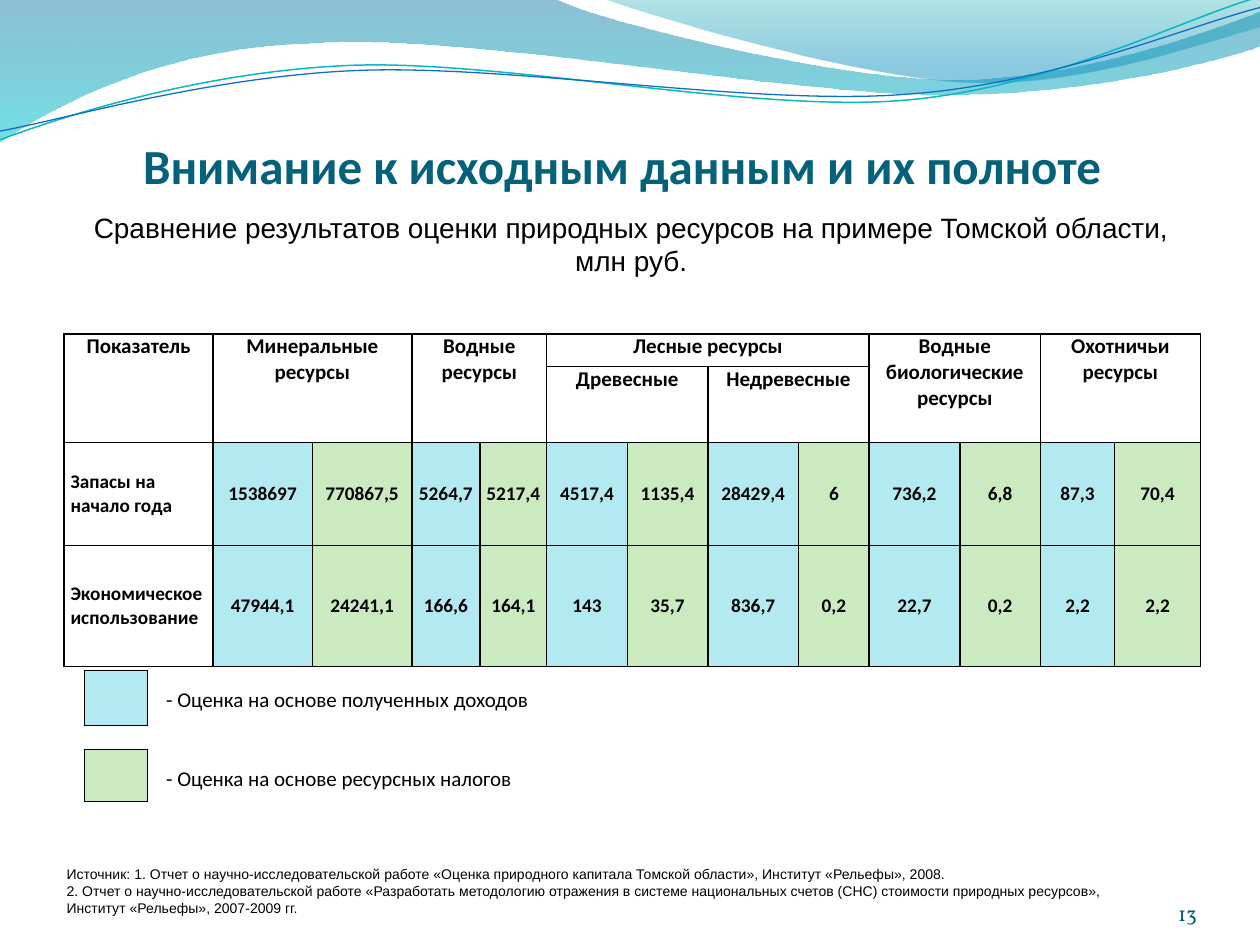
import pptx
import pptx.dml.color
import pptx.enum.shapes
import pptx.enum.text
import pptx.oxml
import pptx.oxml.ns
import pptx.util

Inches = pptx.util.Inches
Pt = pptx.util.Pt
ALIGN = pptx.enum.text.PP_ALIGN
ANCHOR = pptx.enum.text.MSO_ANCHOR
NAMESPACE = pptx.oxml.ns.nsdecls("a")

COLORS = {
    "ink": "000000",
    "paper": "FFFFFF",
    "title": "04617B",
    "number": "045D75",
    "income": "B3EAF2",
    "tax": "CBEAC0",
    "teal_line": "0AB8BF",
    "blue_line": "0F6FC6",
    "wave_blue": "0074A1",
    "wave_cyan": "00C6CF",
    "crest_teal": "00A1A9",
    "crest_blue": "008BBF",
}

WAVES = [
    ([(0, 0), (4.4, -0.01), (4.76, 0.17, 6.64, 0.63, 7.58, 0.63),
      (8.53, 0.63, 9.58, 0.26, 10, 0.09), (10.01, 0.36),
      (9.83, 0.44, 8.7, 0.76, 7.46, 0.75), (6.22, 0.75, 3.82, 0.28, 2.57, 0.34),
      (1.29, 0.36, 0.46, 0.83, -0.01, 1.13)],
     [(0, "wave_blue", 45), (100, "wave_cyan", 55)]),
    ([(4.79, -0.01), (5.09, 0.11, 6.82, 0.62, 7.69, 0.65),
      (8.56, 0.69, 9.61, 0.32, 10, 0.21), (10, 0)],
     [(0, "crest_teal", 30), (80, "crest_blue", 45)]),
]
RIPPLES = [
    ([(0, 1.11), (0.48, 0.93, 1.58, 0.57, 2.77, 0.52),
      (3.95, 0.47, 5.93, 0.89, 7.13, 0.8), (8.33, 0.71, 9.38, 0.15, 9.98, -0.02)],
     "teal_line", 0.85),
    ([(0, 1.04), (0.47, 0.96, 1.64, 0.61, 2.83, 0.56),
      (4.03, 0.51, 5.97, 0.84, 7.17, 0.75), (8.36, 0.67, 9.41, 0.21, 10, 0.06)],
     "blue_line", 0.75),
]

COLUMNS = [1.18, 0.79, 0.79, 0.54, 0.53, 0.64, 0.64, 0.72, 0.56, 0.72, 0.64, 0.59, 0.68]
ROWS = [0.26, 0.48, 0.82, 0.96]
HEADERS = [
    (0, 0, 2, 1, "Показатель"),
    (0, 1, 2, 2, "Минеральные ресурсы"),
    (0, 3, 2, 2, "Водные ресурсы"),
    (0, 5, 1, 4, "Лесные ресурсы"),
    (0, 9, 2, 2, "Водные биологические ресурсы"),
    (0, 11, 2, 2, "Охотничьи ресурсы"),
    (1, 5, 1, 2, "Древесные"),
    (1, 7, 1, 2, "Недревесные"),
]
VALUES = [
    ["Запасы на начало года", "1538697", "770867,5", "5264,7", "5217,4", "4517,4",
     "1135,4", "28429,4", "6", "736,2", "6,8", "87,3", "70,4"],
    ["Экономическое использование", "47944,1", "24241,1", "166,6", "164,1", "143",
     "35,7", "836,7", "0,2", "22,7", "0,2", "2,2", "2,2"],
]
LEGEND = [
    (5.32, 0.44, "income", (1.22, 5.4, 3.21, 0.3),
     "- Оценка на основе полученных доходов", "paper"),
    (5.95, 0.41, "tax", (1.22, 6.03, 2.98, 0.3),
     "- Оценка на основе ресурсных налогов", None),
]
SOURCES = [
    "Источник: 1. Отчет о научно-исследовательской работе «Оценка природного капитала "
    "Томской области», Институт «Рельефы», 2008.",
    "2. Отчет о научно-исследовательской работе «Разработать методологию отражения в системе "
    "национальных счетов (СНС) стоимости природных ресурсов», Институт «Рельефы», 2007-2009 гг.",
]


def rgb(name):
    return pptx.dml.color.RGBColor.from_string(COLORS[name])


class Painter:
    font = "Calibri"

    def __init__(self, page):
        self.page = page

    def format(self, frame, size, color="ink", bold=False, align=ALIGN.LEFT, font=None):
        for para in frame.paragraphs:
            para.alignment = align
            for span in para.runs:
                span.font.size = Pt(size)
                span.font.name = font or self.font
                span.font.bold = bold
                span.font.color.rgb = rgb(color)

    def text(self, at, text, size, wrap=True, anchor=ANCHOR.TOP, inset=None, back=None, **style):
        place = [Inches(length) for length in at]
        if back:
            box = self.page.shapes.add_shape(
                pptx.enum.shapes.MSO_SHAPE.RECTANGLE, *place)
            box.shadow.inherit = False
            box.line.fill.background()
            self.fill(box, back)
        else:
            box = self.page.shapes.add_textbox(*place)
        frame = box.text_frame
        frame.text = text
        frame.word_wrap = wrap
        frame.vertical_anchor = anchor
        if inset is not None:
            frame.margin_left = frame.margin_right = Inches(0)
            frame.margin_top, frame.margin_bottom = map(Inches, inset)
        self.format(frame, size, **style)

    def outline(self, commands, close):
        start, *ends = [(Inches(command[-2]), Inches(command[-1])) for command in commands]
        builder = self.page.shapes.build_freeform(*start)
        builder.add_line_segments(ends, close=close)
        shape = builder.convert_to_shape()
        shape.shadow.inherit = False
        shape.fill.background()
        segments = list(shape.element.iter(pptx.oxml.ns.qn("a:lnTo")))
        for segment, command in zip(segments, commands[1:]):
            if len(command) == 6:
                points = "".join(
                    f'<a:pt x="{Inches(x) - shape.left}" y="{Inches(y) - shape.top}"/>'
                    for x, y in zip(command[::2], command[1::2]))
                curve = pptx.oxml.parse_xml(
                    f'<a:cubicBezTo {NAMESPACE}>{points}</a:cubicBezTo>')
                segment.getparent().replace(segment, curve)
        return shape

    def wave(self, commands, stops):
        shape = self.outline(commands, True)
        shape.line.fill.background()
        marks = "".join(
            f'<a:gs pos="{place * 1000}"><a:srgbClr val="{COLORS[color]}">'
            f'<a:alpha val="{alpha * 1000}"/></a:srgbClr></a:gs>'
            for place, color, alpha in stops)
        gradient = pptx.oxml.parse_xml(
            f'<a:gradFill {NAMESPACE}><a:gsLst>{marks}</a:gsLst>'
            '<a:lin ang="5400000" scaled="0"/></a:gradFill>')
        properties = shape.element.spPr
        properties.replace(properties.find(pptx.oxml.ns.qn("a:noFill")), gradient)

    def ripple(self, commands, color, width):
        shape = self.outline(commands, False)
        shape.line.color.rgb = rgb(color)
        shape.line.width = Pt(width)

    def table(self, left, top, columns, rows):
        table = self.page.shapes.add_table(
            len(rows), len(columns), Inches(left), Inches(top),
            Inches(sum(columns)), Inches(sum(rows))).table
        table.first_row = table.horz_banding = False
        for column, width in zip(table.columns, columns):
            column.width = Inches(width)
        for row, height in zip(table.rows, rows):
            row.height = Inches(height)
        for cell in table.iter_cells():
            self.fill(cell, "paper")
            properties = cell._tc.get_or_add_tcPr()
            for index, side in enumerate(("lnL", "lnR", "lnT", "lnB")):
                properties.insert(index, pptx.oxml.parse_xml(
                    f'<a:{side} {NAMESPACE} w="12700"><a:solidFill>'
                    f'<a:srgbClr val="{COLORS["ink"]}"/></a:solidFill></a:{side}>'))
        return table

    def fill(self, item, color):
        item.fill.solid()
        item.fill.fore_color.rgb = rgb(color)

    def cell(self, cell, text, size, align=ALIGN.CENTER, anchor=ANCHOR.TOP):
        cell.margin_left = cell.margin_right = Inches(0.05)
        cell.margin_top = cell.margin_bottom = Inches(0)
        cell.vertical_anchor = anchor
        cell.text_frame.text = text
        self.format(cell.text_frame, size, bold=True, align=align)


def main():
    deck = pptx.Presentation()
    deck.slide_width, deck.slide_height = Inches(10), Inches(7.5)
    painter = Painter(deck.slides.add_slide(deck.slide_layouts[6]))

    for wave in WAVES:
        painter.wave(*wave)
    for ripple in RIPPLES:
        painter.ripple(*ripple)

    painter.text((0.63, 0.6, 8.61, 0.94), "Внимание к исходным данным и их полноте", 28,
                 anchor=ANCHOR.BOTTOM, inset=(0.05, 0), color="title", bold=True,
                 align=ALIGN.CENTER)

    table = painter.table(0.51, 2.65, COLUMNS, ROWS)
    for row, column, height, width, text in HEADERS:
        cell = table.cell(row, column)
        if height * width > 1:
            cell.merge(table.cell(row + height - 1, column + width - 1))
        painter.cell(cell, text, 12)
    for row, values in enumerate(VALUES, 2):
        for column, text in enumerate(values):
            cell = table.cell(row, column)
            painter.cell(cell, text, 11, ALIGN.CENTER if column else ALIGN.LEFT, ANCHOR.MIDDLE)
            if column:
                painter.fill(cell, "income" if column % 2 else "tax")

    for top, height, color, label_at, label, back in LEGEND:
        swatch = painter.table(0.67, top, [0.5], [height])
        painter.fill(swatch.cell(0, 0), color)
        painter.text(label_at, label, 12, wrap=False, back=back)

    painter.text((8.67, 6.95, 0.83, 0.4), "13", 12, anchor=ANCHOR.BOTTOM, inset=(0, 0),
                 color="number", align=ALIGN.RIGHT, font="Vollkorn")
    painter.text((0.58, 1.62, 8.86, 0.64),
                 "Сравнение результатов оценки природных ресурсов на примере Томской области, "
                 "млн руб.", 16, align=ALIGN.CENTER, font="Arial")
    painter.text((0.43, 6.82, 8.62, 0.5), "\n".join(SOURCES), 8, font="Arial")
    deck.save("out.pptx")


if __name__ == "__main__":
    main()
